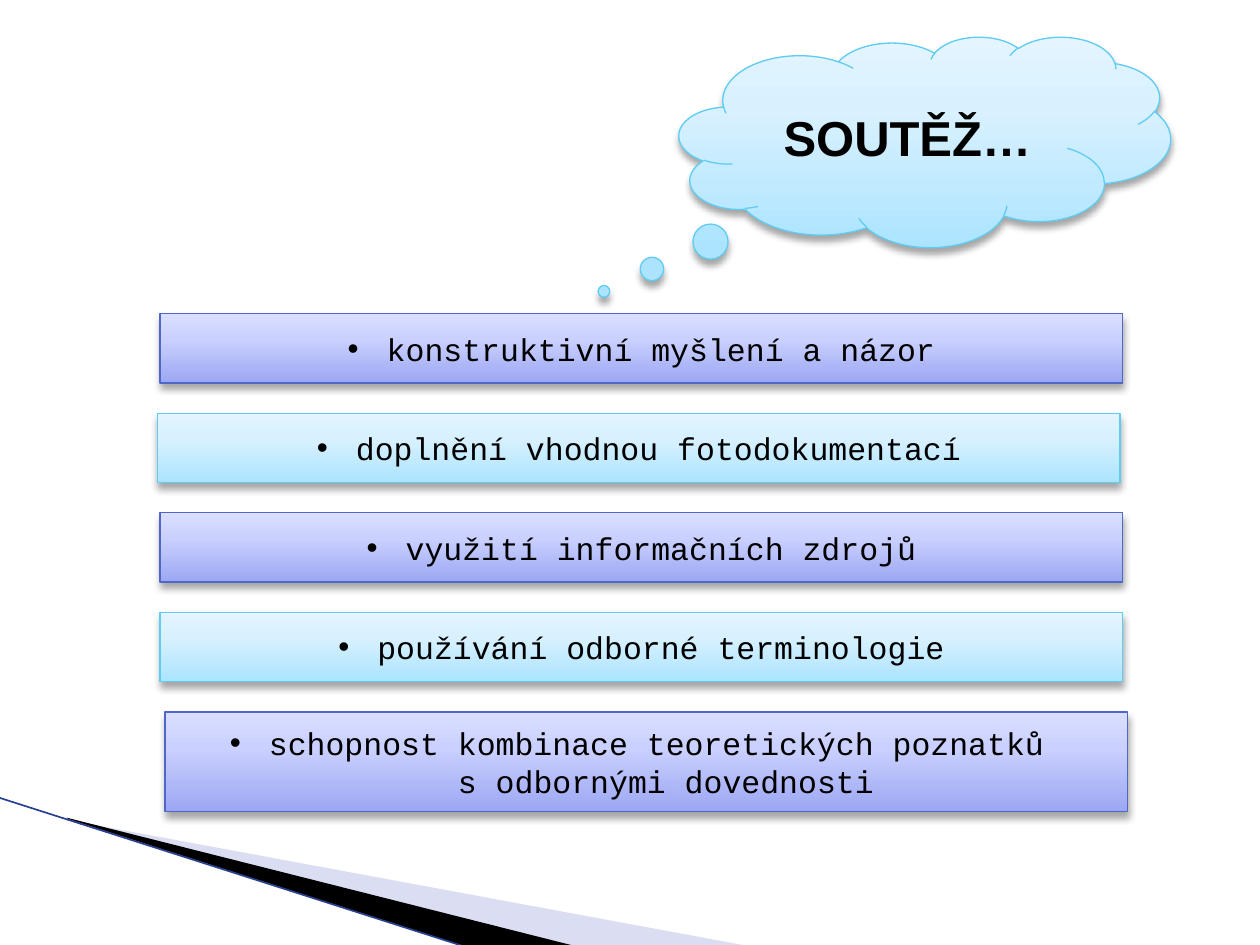
from lxml import etree
from pptx import Presentation, oxml, util as u
from pptx.dml import color
from pptx.enum import shapes, text
from pptx.oxml import ns

BLUE = ("4E67C8", ("9CA7F2", "CBD1FF", "DADFFF"))
AQUA = ("5ECCF3", ("ACE4FF", "D8F1FF", "E4F5FF"))
BARS = [
    ("konstruktivní myšlení a názor", BLUE, 0, 0.55),
    ("doplnění vhodnou fotodokumentací", AQUA, -0.02, 0.55),
    ("využití informačních zdrojů", BLUE, 0, 0.55),
    ("používání odborné terminologie", AQUA, 0, 0.55),
    ("schopnost kombinace teoretických poznatků \vs odbornými dovednosti", BLUE, 0.04, 0.79),
]


def rgb(code):
    """Turn a hex string into a colour."""
    return color.RGBColor.from_string(code)


def xml(body):
    """Parse one drawing element."""
    return oxml.parse_xml(body.replace(">", f" {ns.nsdecls('a')}>", 1))


def write(shape, words, size, font, bold=False, bullet=False, edge=None):
    """Put centred, formatted text in a shape."""
    frame = shape.text_frame
    frame.word_wrap = True
    frame.vertical_anchor = text.MSO_ANCHOR.MIDDLE
    para = frame.paragraphs[0]
    para.text = words
    para.alignment = text.PP_ALIGN.CENTER
    if bullet:
        props = para._p.get_or_add_pPr()
        props.set("marL", str(u.Inches(0.31)))
        props.set("indent", str(u.Inches(-0.31)))
        props.append(xml('<a:buFont typeface="Arial"></a:buFont>'))
        props.append(xml('<a:buChar char="•"></a:buChar>'))
    for run in para.runs:
        run.font.size = u.Pt(size)
        run.font.name = font
        run.font.bold = bold
        run.font.color.rgb = rgb("000000")
        if edge:
            run._r.get_or_add_rPr().insert(0, xml(
                f'<a:ln w="{u.Pt(0.75)}"><a:solidFill><a:srgbClr val="{edge}"/></a:solidFill></a:ln>'))


def panel(slide, kind, box, theme):
    """Add a shape with gradient, outline and soft shadow."""
    shape = slide.shapes.add_shape(kind, *map(u.Inches, box))
    line, tones = theme
    shape.line.color.rgb = rgb(line)
    shape.line.width = u.Pt(0.75)
    stops = "".join(f'<a:gs pos="{pos}000"><a:srgbClr val="{tone}"/></a:gs>'
                    for pos, tone in zip((0, 65, 100), tones))
    props = shape._element.spPr
    props.find(ns.qn("a:ln")).addprevious(xml(
        f'<a:gradFill rotWithShape="1"><a:gsLst>{stops}</a:gsLst>'
        '<a:lin ang="16200000" scaled="0"/></a:gradFill>'))
    props.append(xml(
        f'<a:effectLst><a:outerShdw blurRad="{u.Pt(4)}" dist="{u.Pt(3)}" dir="5400000" rotWithShape="0">'
        '<a:srgbClr val="000000"><a:alpha val="35000"/></a:srgbClr></a:outerShdw></a:effectLst>'))
    return shape


def wedge(slide, points, fill, alpha=100):
    """Add a filled outline without a border."""
    first, *rest = [tuple(map(u.Inches, point)) for point in points]
    build = slide.shapes.build_freeform(*first)
    build.add_line_segments(rest, close=True)
    shape = build.convert_to_shape()
    shape.shadow.inherit = False
    shape.fill.solid()
    shape.fill.fore_color.rgb = rgb(fill)
    shape.line.fill.background()
    if alpha < 100:
        tone = shape._element.spPr.find(".//" + ns.qn("a:srgbClr"))
        etree.SubElement(tone, ns.qn("a:alpha")).set("val", f"{alpha}000")


def corner(slide, left, top):
    """Draw the swoosh from its upper left point."""
    def place(*points):
        return [(left + x, top + y) for x, y in points]

    wedge(slide, place((0.56, 0.18), (5.96, 1.18), (4.57, 1.18), (0.56, 0.17)), "A6AEE1", 40)
    wedge(slide, place((0.54, 0.16), (4.58, 1.18), (3.73, 1.19), (0.55, 0.17)), "000000")
    (x, y), (right, low) = place((0, 0), (3.72, 1.19))
    line = slide.shapes.add_connector(shapes.MSO_CONNECTOR.STRAIGHT, *map(u.Inches, (x, y, right, low)))
    line.line.color.rgb = rgb("2A4090")
    line.line.width = u.Pt(0.95)
    line._element.spPr.append(xml("<a:effectLst></a:effectLst>"))


def bars(slide, left, top, width, step):
    """Stack the bulleted bars at equal steps."""
    for row, (words, theme, shift, height) in enumerate(BARS):
        box = (left + shift, top + row * step, width, height)
        bar = panel(slide, shapes.MSO_SHAPE.RECTANGLE, box, theme)
        write(bar, words, 18, "Courier New", bullet=True)


def cloud(slide, box):
    """Add the thought cloud with the heading."""
    shape = panel(slide, shapes.MSO_SHAPE.CLOUD_CALLOUT, box, AQUA)
    shape.adjustments[0] = -0.653
    shape.adjustments[1] = 0.711
    write(shape, "SOUTĚŽ…", 28, "Arial", bold=True, edge="B4DCFA")


def main():
    """Build and save the slide."""
    deck = Presentation()
    deck.slide_width, deck.slide_height = u.Inches(10), u.Inches(7.5)
    slide = deck.slides.add_slide(deck.slide_layouts[6])
    corner(slide, -0.01, 6.33)
    bars(slide, 1.27, 2.49, 7.64, 0.79)
    cloud(slide, (5.39, 0.29, 3.9, 1.67))
    deck.save("out.pptx")


if __name__ == "__main__":
    main()
